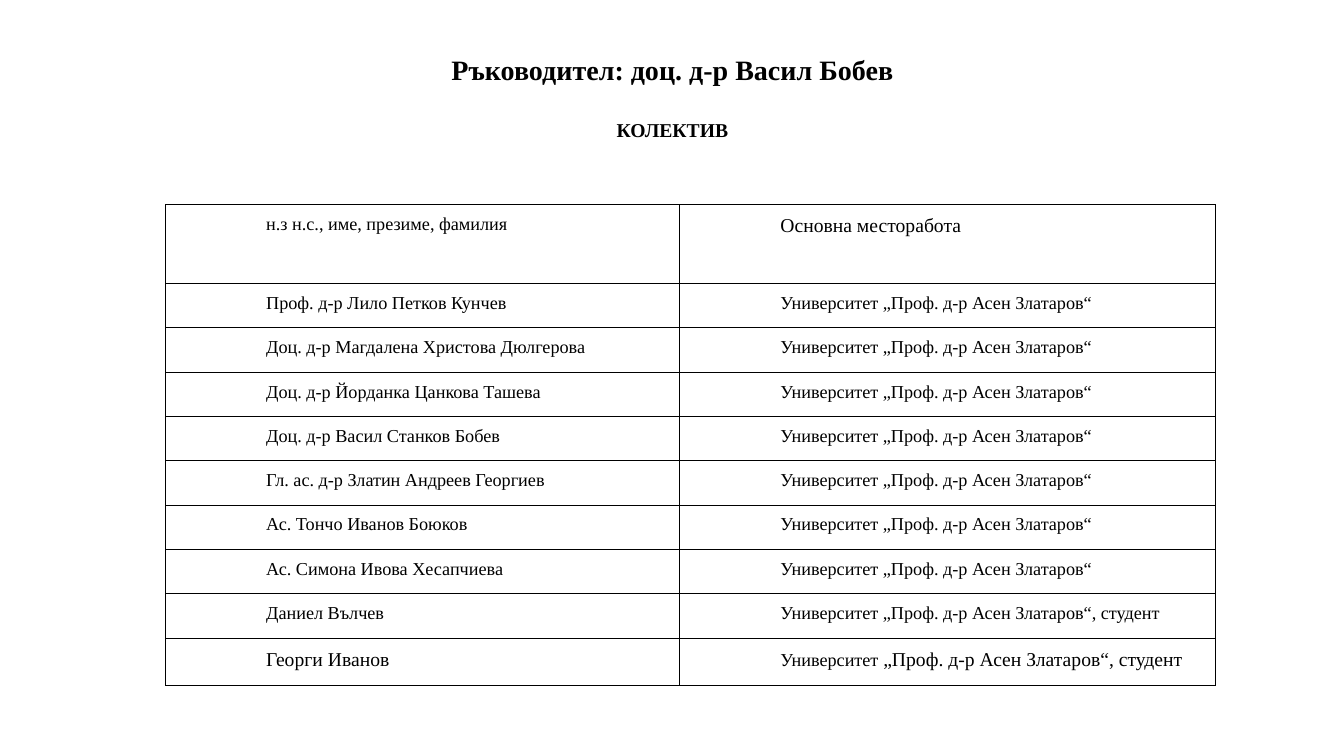
from lxml import etree
from pptx import Presentation
from pptx.dml.color import RGBColor
from pptx.enum import text
from pptx.oxml import ns
from pptx.util import Inches, Pt

# Content
LEADER = "Ръководител: доц. д-р Васил Бобев"
TEAM = "КОЛЕКТИВ"
UNIVERSITY = "Университет „Проф. д-р Асен Златаров“"
STUDENT = UNIVERSITY + ", студент"
HEADER = ("н.з н.с., име, презиме, фамилия", "Основна месторабота")
STAFF = [
    "Проф. д-р Лило Петков Кунчев",
    "Доц. д-р Магдалена Христова Дюлгерова",
    "Доц. д-р Йорданка Цанкова Ташева",
    "Доц. д-р Васил Станков Бобев",
    "Гл. ас. д-р Златин Андреев Георгиев",
    "Ас. Тончо Иванов Боюков",
    "Ас. Симона Ивова Хесапчиева",
]
STUDENTS = ["Даниел Вълчев", "Георги Иванов"]
MEMBERS = ([HEADER] + [(name, UNIVERSITY) for name in STAFF]
           + [(name, STUDENT) for name in STUDENTS])

# Style
COLORS = {"ink": "000000", "paper": "FFFFFF"}
FONT = "Times New Roman"
COLUMN_WIDTHS = (5.1, 5.31)
HEADER_HEIGHT, ROW_HEIGHT, LAST_HEIGHT = 0.78, 0.44, 0.47
LAST = len(MEMBERS) - 1
LARGE_CELLS = {(0, 1), (LAST, 0), (LAST, 1)}


def style_font(font, size, bold=False):
    font.name = FONT
    font.size = Pt(size)
    font.bold = bold
    font.color.rgb = RGBColor.from_string(COLORS["ink"])


def set_indent(paragraph, first_line):
    properties = paragraph._p.get_or_add_pPr()
    properties.set("marL", "0")
    properties.set("indent", str(Inches(first_line)))
    return properties


def place_heading(holder, words, top, height, size):
    holder.left, holder.top = Inches(0.92), Inches(top)
    holder.width, holder.height = Inches(11.5), Inches(height)
    holder.text_frame.text = words
    paragraph = holder.text_frame.paragraphs[0]
    paragraph.alignment = text.PP_ALIGN.CENTER
    paragraph.line_spacing = 0.9
    style_font(paragraph.font, size, bold=True)
    return paragraph


def add_borders(cell):
    properties = cell._tc.get_or_add_tcPr()
    for side in ("lnL", "lnR", "lnT", "lnB"):
        line = etree.SubElement(properties, ns.qn("a:" + side), w=str(Pt(0.5)))
        fill = etree.SubElement(line, ns.qn("a:solidFill"))
        etree.SubElement(fill, ns.qn("a:srgbClr"), val=COLORS["ink"])


def fill_cell(cell, words, size):
    add_borders(cell)
    cell.fill.background()
    cell.margin_left = cell.margin_right = 0
    cell.margin_top = cell.margin_bottom = 0
    paragraph = cell.text_frame.paragraphs[0]
    paragraph.alignment = text.PP_ALIGN.JUSTIFY
    paragraph.line_spacing = 1.5
    paragraph.space_after = Pt(10)
    set_indent(paragraph, 1)
    paragraph.text = words
    style_font(paragraph.font, size)
    return paragraph


# Slide
deck = Presentation()
deck.slide_width, deck.slide_height = Inches(13.33), Inches(7.5)
slide = deck.slides.add_slide(deck.slide_layouts[1])
slide.background.fill.solid()
slide.background.fill.fore_color.rgb = RGBColor.from_string(COLORS["paper"])

# Headings
leader, team = slide.placeholders
place_heading(leader, LEADER, 0.4, 0.61, 20)
subtitle = place_heading(team, TEAM, 1.15, 6.05, 14)
subtitle.space_before = Pt(10)
etree.SubElement(set_indent(subtitle, 0), ns.qn("a:buNone"))

# Team table
heights = [HEADER_HEIGHT] + [ROW_HEIGHT] * (LAST - 1) + [LAST_HEIGHT]
members = slide.shapes.add_table(
    len(MEMBERS), len(COLUMN_WIDTHS), Inches(1.64), Inches(2.03),
    Inches(sum(COLUMN_WIDTHS)), Inches(sum(heights))).table
members.first_row = members.horz_banding = False
for column, width in zip(members.columns, COLUMN_WIDTHS):
    column.width = Inches(width)
for row, (height, entries) in enumerate(zip(heights, MEMBERS)):
    members.rows[row].height = Inches(height)
    for column, words in enumerate(entries):
        size = 14 if (row, column) in LARGE_CELLS else 13
        entry = fill_cell(members.cell(row, column), words, size)

# The last workplace starts with a smaller word
first_word, rest = STUDENT.split(" ", 1)
entry.runs[0].text = first_word
entry.runs[0].font.size = Pt(13)
entry.add_run().text = " " + rest

deck.save("out.pptx")
